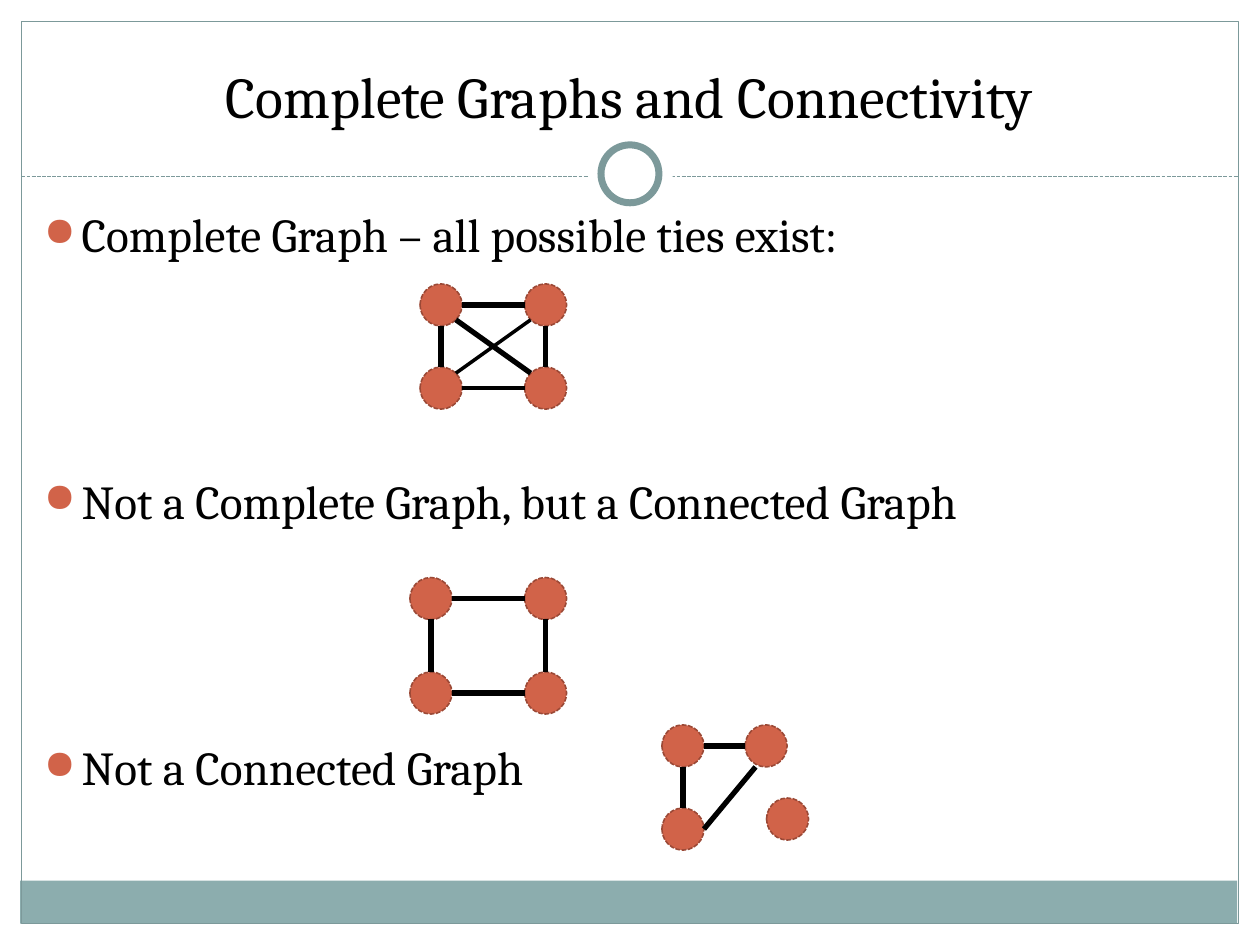
"""Build a slide on complete, connected and disconnected graphs."""
import pptx
import pptx.util
import pptx.dml.color
import pptx.enum.shapes
import pptx.enum.text
import pptx.enum.dml
import pptx.oxml
import pptx.oxml.ns

Inches, Pt = pptx.util.Inches, pptx.util.Pt
SHAPE = pptx.enum.shapes.MSO_SHAPE
DASH = pptx.enum.dml.MSO_LINE.SQUARE_DOT

THEME = {
    "font": "Cambria", "title": 33, "body": 27, "gap": 120,
    "ink": "000000", "paper": "FFFFFF", "node": "D16349", "rim": "9B4936",
    "frame": "7C999A", "band": "8CADAE",
}
TITLE = "Complete Graphs and Connectivity"
POINTS = [
    "Complete Graph – all possible ties exist:",
    "Not a Complete Graph, but a Connected Graph",
    "Not a Connected Graph",
]
RADIUS = 1 / 6
SIDES = {
    "left": (-1, 0), "right": (1, 0), "top": (0, -1), "base": (0, 1),
    "nw": (-0.71, -0.71), "ne": (0.71, -0.71),
    "sw": (-0.71, 0.71), "se": (0.71, 0.71), "low": (-0.5, 1),
}
RING = [
    (0, "right", 1, "left", 3), (0, "base", 2, "top", 3),
    (1, "base", 3, "top", 3),
]
GRAPHS = [
    {"nodes": [(3.5, 2.42), (4.33, 2.42), (3.5, 3.08), (4.33, 3.08)],
     "ties": RING + [(2, "right", 3, "left", 2), (0, "se", 3, "nw", 3),
                     (2, "ne", 1, "sw", 2)]},
    {"nodes": [(3.42, 4.75), (4.33, 4.75), (3.42, 5.5), (4.33, 5.5)],
     "ties": RING + [(2, "right", 3, "left", 3)]},
    {"nodes": [(5.42, 5.92), (6.08, 5.92), (5.42, 6.58), (6.25, 6.5)],
     "ties": RING[:2] + [(2, "right", 1, "low", 3)]},
]


def tint(name):
    return pptx.dml.color.RGBColor.from_string(THEME[name])


def stroke(line, name, width, dash=None):
    line.color.rgb = tint(name)
    line.width = Pt(width)
    if dash:
        line.dash_style = dash


def add_form(slide, kind, box, fill=None, line=None, width=1, dash=None):
    form = slide.shapes.add_shape(kind, *map(Inches, box))
    form.shadow.inherit = False
    if fill:
        form.fill.solid()
        form.fill.fore_color.rgb = tint(fill)
    else:
        form.fill.background()
    if line:
        stroke(form.line, line, width, dash)
    else:
        form.line.fill.background()


def add_tie(slide, start, end, name, width, dash=None):
    tie = slide.shapes.add_connector(
        pptx.enum.shapes.MSO_CONNECTOR.STRAIGHT, *map(Inches, start + end))
    stroke(tie.line, name, width, dash)
    props = tie._element.spPr
    props.append(pptx.oxml.parse_xml(
        "<a:effectLst %s/>" % pptx.oxml.ns.nsdecls("a")))


def style(para, size):
    for run in para.runs:
        run.font.name = THEME["font"]
        run.font.size = Pt(THEME[size])
        run.font.color.rgb = tint("ink")


def add_frame(slide):
    add_form(slide, SHAPE.RECTANGLE, (0.16, 6.99, 9.66, 0.34), "band")
    add_form(slide, SHAPE.RECTANGLE, (0.17, 0.17, 9.66, 7.16),
             line="frame", width=0.75)
    add_tie(slide, (0.17, 1.4), (9.83, 1.4), "frame", 0.75, DASH)
    add_form(slide, SHAPE.OVAL, (4.67, 1.05, 0.67, 0.67), "paper")
    add_form(slide, SHAPE.OVAL, (4.77, 1.15, 0.46, 0.46), "paper", "frame", 4)


def add_title(slide):
    title = slide.shapes.title
    title.left, title.top, title.width, title.height = map(
        Inches, (0.33, 0.25, 9.33, 0.83))
    text = title.text_frame
    text.text = TITLE
    text.auto_size = pptx.enum.text.MSO_AUTO_SIZE.NONE
    text.vertical_anchor = pptx.enum.text.MSO_ANCHOR.BOTTOM
    text.paragraphs[0].alignment = pptx.enum.text.PP_ALIGN.CENTER
    style(text.paragraphs[0], "title")


def add_points(slide):
    text = slide.shapes.add_textbox(
        *map(Inches, (0.25, 1.58, 9.3, 5))).text_frame
    text.word_wrap = True
    text.text = "\n".join(POINTS)
    for rank, para in enumerate(text.paragraphs):
        style(para, "body")
        para.space_before = Pt(THEME["gap"] if rank else 0)
        props = para._p.get_or_add_pPr()
        props.set("marL", str(Inches(0.3)))
        props.set("indent", str(-Inches(0.3)))
        space = pptx.oxml.ns.nsdecls("a")
        for part in (
            '<a:buClr %s><a:srgbClr val="%s"/></a:buClr>'
            % (space, THEME["node"]),
            '<a:buSzPct %s val="85000"/>' % space,
            '<a:buChar %s char="●"/>' % space,
        ):
            props.append(pptx.oxml.parse_xml(part))


def add_graph(slide, graph):
    nodes = graph["nodes"]

    def port(node, side):
        return tuple(mid + RADIUS * step
                     for mid, step in zip(nodes[node], SIDES[side]))

    for x, y in nodes:
        box = (x - RADIUS, y - RADIUS, 2 * RADIUS, 2 * RADIUS)
        add_form(slide, SHAPE.OVAL, box, "node", "rim", 0.9, DASH)
    for first, exit_side, last, entry_side, width in graph["ties"]:
        add_tie(slide, port(first, exit_side), port(last, entry_side),
                "ink", width)


def main():
    deck = pptx.Presentation()
    deck.slide_width, deck.slide_height = Inches(10), Inches(7.5)
    slide = deck.slides.add_slide(deck.slide_layouts[5])
    add_frame(slide)
    add_title(slide)
    add_points(slide)
    for graph in GRAPHS:
        add_graph(slide, graph)
    deck.save("out.pptx")


if __name__ == "__main__":
    main()
